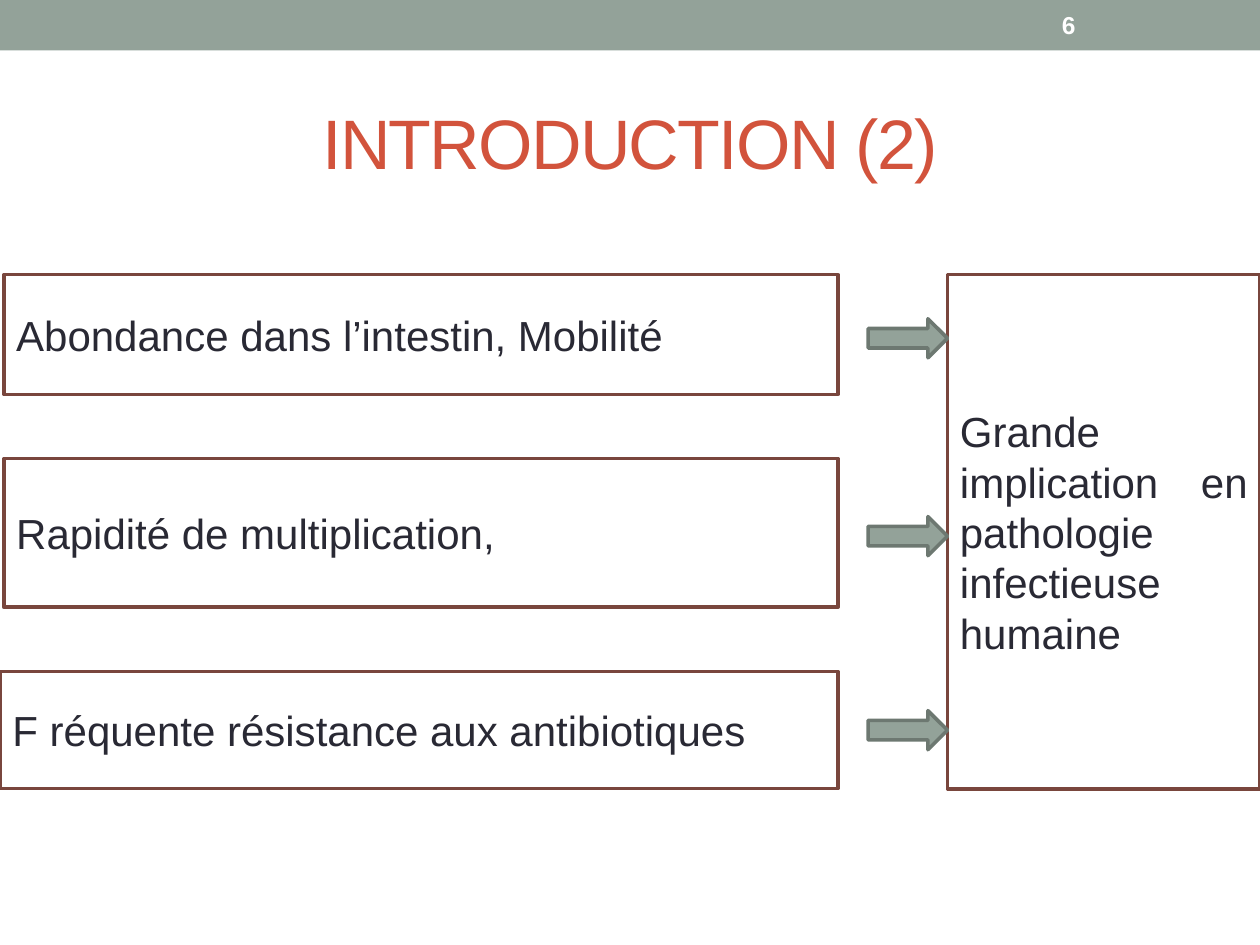
from lxml import etree
from pptx import Presentation, util as u
from pptx.dml.color import RGBColor
from pptx.enum import shapes, text

SAGE = RGBColor(0x93, 0xA2, 0x99)
DARK_SAGE = RGBColor(0x6D, 0x78, 0x71)
BROWN = RGBColor(0x79, 0x46, 0x3D)
RED = RGBColor(0xD2, 0x53, 0x3C)
INK = RGBColor(0x29, 0x29, 0x34)
WHITE = RGBColor(0xFF, 0xFF, 0xFF)

deck = Presentation()
deck.slide_width, deck.slide_height = u.Inches(10), u.Inches(7.5)
page = deck.slides.add_slide(deck.slide_layouts[6])

# Grid of 100 columns by 75 rows
COLUMN = deck.slide_width / 100
ROW = deck.slide_height / 75


def add_box(kind, left, top, width, height, fill=None, line=None):
    box = page.shapes.add_shape(kind, round(left * COLUMN), round(top * ROW),
                                round(width * COLUMN), round(height * ROW))
    box.shadow.inherit = False
    if fill is None:
        box.fill.background()
    else:
        box.fill.solid()
        box.fill.fore_color.rgb = fill
    if line is None:
        box.line.fill.background()
    else:
        box.line.color.rgb = line
        box.line.width = u.Pt(2.08)
    return box


def write(box, words, size, color, align):
    frame = box.text_frame
    frame.word_wrap = True
    frame.vertical_anchor = text.MSO_ANCHOR.MIDDLE
    para = frame.paragraphs[0]
    para.text = words
    para.alignment = align
    para.font.name = "Arial"
    para.font.size = u.Pt(size)
    para.font.color.rgb = color
    return para


RECTANGLE = shapes.MSO_SHAPE.RECTANGLE
ARROW = shapes.MSO_SHAPE.RIGHT_ARROW
ALIGN = text.PP_ALIGN

# Top band and page number
add_box(RECTANGLE, 0, 0, 100, 4, SAGE)
number = add_box(RECTANGLE, 83.3, 0.2, 11.7, 3.6)
write(number, "6", 14, WHITE, ALIGN.LEFT).font.bold = True

# Title with tightened letter spacing
title = add_box(RECTANGLE, 5, 5.8, 90, 10.8)
para = write(title, "INTRODUCTION (2)", 40, RED, ALIGN.CENTER)
para.runs[0].font._element.set("spc", "-100")

# Causes on the left, consequence on the right
CAUSES_RIGHT, RESULT_LEFT = 66.5, 75.2
statements = [
    ("Abondance dans l’intestin, Mobilité", 0.3, 21.8, CAUSES_RIGHT, 31.3),
    ("Rapidité de multiplication,", 0.3, 36.4, CAUSES_RIGHT, 48.2),
    ("F réquente résistance aux antibiotiques", 0, 53.3, CAUSES_RIGHT, 62.6),
    ("Grande implication en pathologie infectieuse humaine",
     RESULT_LEFT, 21.8, 100, 62.6),
]
for words, left, top, right, bottom in statements:
    box = add_box(RECTANGLE, left, top, right - left, bottom - top, WHITE, BROWN)
    write(box, words, 24, INK, ALIGN.JUSTIFY)

# Arrows from each cause to the consequence
ARROW_WIDTH = 6.3
for top in (25.3, 41, 56.4):
    add_box(ARROW, RESULT_LEFT - ARROW_WIDTH, top, ARROW_WIDTH, 3.1, SAGE, DARK_SAGE)

deck.save("out.pptx")
